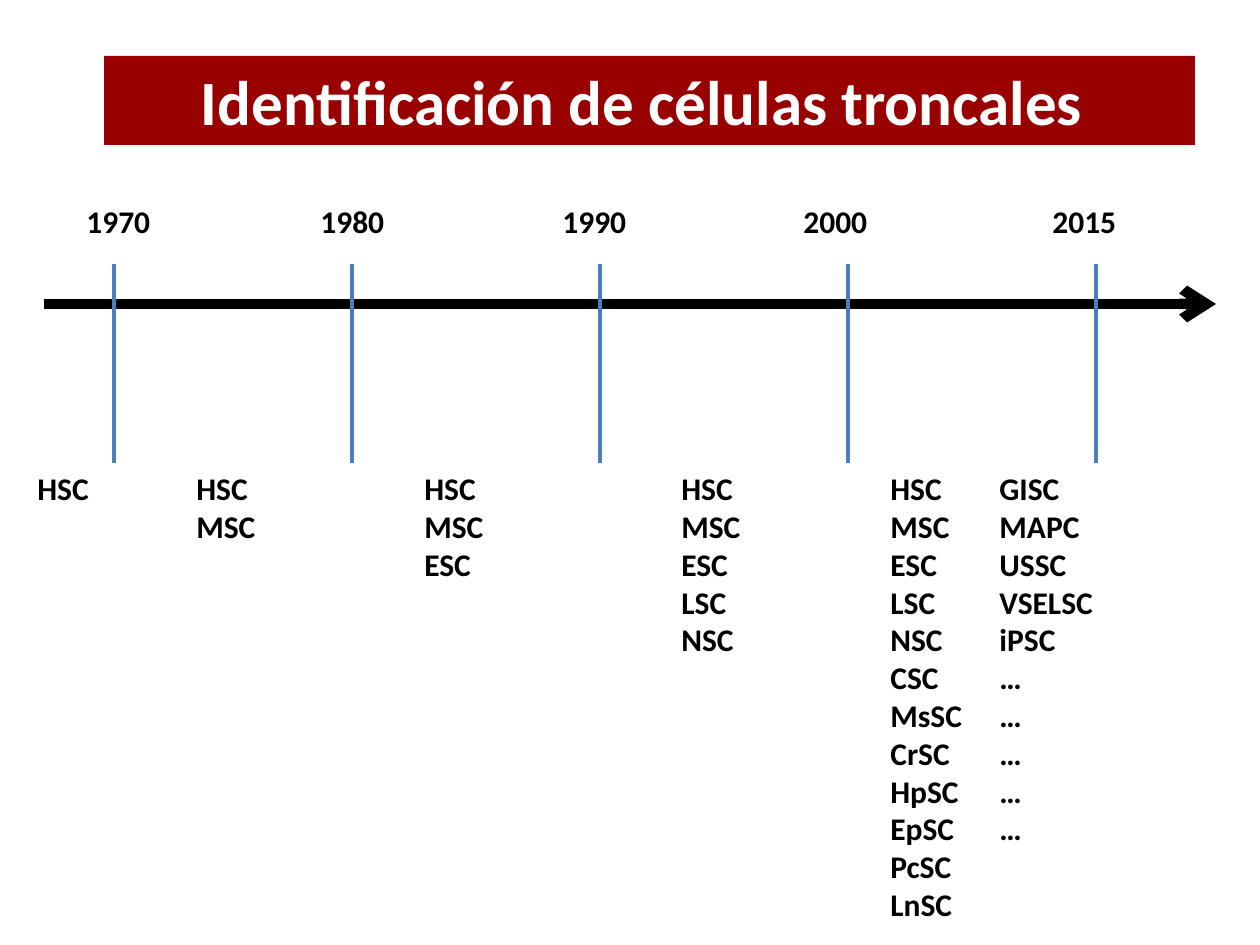
from lxml import etree
from pptx import Presentation
from pptx.dml.color import RGBColor
from pptx.enum.shapes import MSO_CONNECTOR, MSO_SHAPE
from pptx.enum.text import MSO_ANCHOR, PP_ALIGN
from pptx.oxml.ns import qn
from pptx.util import Pt

SCALE = 914400 / 126  # EMU per px
COLORS = {"banner": "990000", "title": "FFFFFF", "text": "000000",
          "axis": "000000", "tick": "4B7EBC"}


def px(*lengths):
    return [round(length * SCALE) for length in lengths]


def add_line(slide, ends, color, weight):
    line = slide.shapes.add_connector(MSO_CONNECTOR.STRAIGHT, *px(*ends))
    line.line.color.rgb = RGBColor.from_string(COLORS[color])
    line.line.width = Pt(weight)
    etree.SubElement(line._element.spPr, qn("a:effectLst"))
    return line


presentation = Presentation()
presentation.slide_width, presentation.slide_height = px(1260, 945)
slide = presentation.slides.add_slide(presentation.slide_layouts[6])

# Time axis
axis = add_line(slide, (44, 304, 1216, 304), "axis", 6)
etree.SubElement(axis.line._get_or_add_ln(), qn("a:tailEnd"), type="arrow")
for x in (114, 352, 600, 848, 1096):
    add_line(slide, (x, 264, x, 463), "tick", 2.25)

# Labels: left, top, width, lines
YEAR_TOP, CELL_TOP = 196, 463
EARLY = ["HSC", "MSC", "ESC", "LSC", "NSC"]
LATE = ["CSC", "MsSC", "CrSC", "HpSC", "EpSC", "PcSC", "LnSC"]
RECENT = ["GISC", "MAPC", "USSC", "VSELSC", "iPSC"] + ["…"] * 5
labels = [
    (74, YEAR_TOP, 92, ["1970"]),
    (308, YEAR_TOP, 92, ["1980"]),
    (550, YEAR_TOP, 92, ["1990"]),
    (791, YEAR_TOP, 92, ["2000"]),
    (1040, YEAR_TOP, 92, ["2015"]),
    (25, CELL_TOP, 80, EARLY[:1]),
    (184, CELL_TOP, 90, EARLY[:2]),
    (412, CELL_TOP, 100, EARLY[:3]),
    (669, CELL_TOP, 100, EARLY),
    (878, CELL_TOP, 118, EARLY + LATE),
    (987, CELL_TOP, 122, RECENT),
]
for left, top, width, lines in labels:
    height = 13 + 38 * len(lines)
    frame = slide.shapes.add_textbox(*px(left, top, width, height)).text_frame
    frame.word_wrap = True
    frame.text = "\n".join(lines)
    for paragraph in frame.paragraphs:
        font = paragraph.font
        font.name, font.size, font.bold = "Calibri", Pt(18), True
        font.color.rgb = RGBColor.from_string(COLORS["text"])

# Title banner
banner = slide.shapes.add_shape(MSO_SHAPE.RECTANGLE, *px(104, 56, 1091, 89))
banner.shadow.inherit = False
banner.fill.solid()
banner.fill.fore_color.rgb = RGBColor.from_string(COLORS["banner"])
banner.line.fill.background()
frame = banner.text_frame
frame.word_wrap = True
frame.vertical_anchor = MSO_ANCHOR.TOP
frame.margin_right = px(28)[0]
frame.text = "Identificación de células troncales"
paragraph = frame.paragraphs[0]
paragraph.alignment = PP_ALIGN.CENTER
font = paragraph.font
font.name, font.size, font.bold = "Calibri", Pt(36), True
font.color.rgb = RGBColor.from_string(COLORS["title"])

presentation.save("out.pptx")
